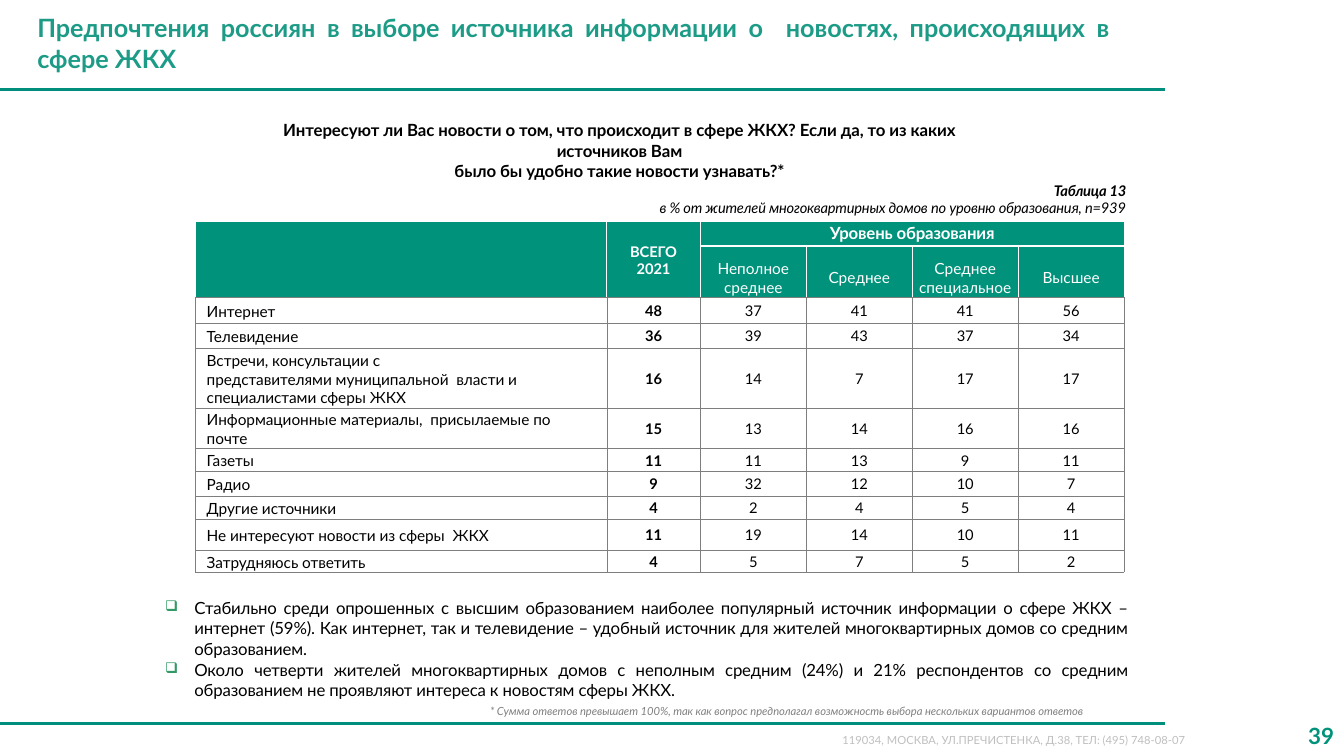
from lxml import etree
from pptx import Presentation
from pptx.dml.color import RGBColor
from pptx.enum.shapes import MSO_CONNECTOR
from pptx.enum.text import MSO_ANCHOR, PP_ALIGN
from pptx.oxml.ns import qn
from pptx.util import Cm, Pt

LEFT, CENTER, RIGHT, JUSTIFY = PP_ALIGN.LEFT, PP_ALIGN.CENTER, PP_ALIGN.RIGHT, PP_ALIGN.JUSTIFY
TOP, MIDDLE = MSO_ANCHOR.TOP, MSO_ANCHOR.MIDDLE
STRAIGHT = MSO_CONNECTOR.STRAIGHT

COLORS = {
    "rule": "008F7D", "header": "00927B", "title": "1C9B87", "bullet": "339966",
    "address": "BFBFBF", "note": "808080", "grid": "7E7E7E", "ink": "000000", "white": "FFFFFF",
}
DEFAULT_INSETS = (0.25, 0.13, 0.25, 0.13)
TIGHT = (0, 0.03, 0, 0)

COLUMN_WIDTHS = [10.36, 2.36] + [2.67] * 4
ROW_HEIGHTS = [0.61, 1.3, 0.64, 0.64, 1.5, 1.02, 0.58, 0.61, 0.58, 0.79, 0.56]
EDUCATION_LEVELS = ["Неполное среднее", "Среднее", "Среднее специальное", "Высшее"]
ANSWERS = [
    (["Интернет"], 48, 37, 41, 41, 56),
    (["Телевидение"], 36, 39, 43, 37, 34),
    (["Встречи, консультации с",
      "представителями муниципальной  власти и специалистами сферы ЖКХ"], 16, 14, 7, 17, 17),
    (["Информационные материалы,  присылаемые по почте"], 15, 13, 14, 16, 16),
    (["Газеты"], 11, 11, 13, 9, 11),
    (["Радио"], 9, 32, 12, 10, 7),
    (["Другие источники"], 4, 2, 4, 5, 4),
    (["Не интересуют новости из сферы  ЖКХ"], 11, 19, 14, 10, 11),
    (["Затрудняюсь ответить"], 4, 5, 7, 5, 2),
]
FINDINGS = [
    "Стабильно среди опрошенных с высшим образованием наиболее популярный источник информации "
    "о сфере ЖКХ – интернет (59%). Как интернет, так и телевидение – удобный источник для жителей "
    "многоквартирных домов со средним образованием.",
    "Около четверти жителей многоквартирных домов с неполным средним (24%) и 21% респондентов "
    "со средним образованием не проявляют интереса к новостям сферы ЖКХ.",
]


class SurveyPage:
    """Draws the elements of a survey page in one shared style."""

    def __init__(self, deck, font="Lato"):
        self.page = deck.slides.add_slide(deck.slide_layouts[6])
        self.font = font

    def rule(self, top, width=29.36):
        line = self.page.shapes.add_connector(STRAIGHT, 0, Cm(top), Cm(width), Cm(top))
        line.line.color.rgb = RGBColor.from_string(COLORS["rule"])
        line.line.width = Pt(2)
        etree.SubElement(line._element.spPr, qn("a:effectLst"))

    def box(self, left, top, width, height, insets=DEFAULT_INSETS, anchor=TOP):
        frame = self.page.shapes.add_textbox(Cm(left), Cm(top), Cm(width), Cm(height)).text_frame
        frame.word_wrap = True
        self.inset(frame, insets)
        frame.vertical_anchor = anchor
        return frame

    def inset(self, holder, insets):
        (holder.margin_left, holder.margin_top,
         holder.margin_right, holder.margin_bottom) = map(Cm, insets)

    def paragraph(self, frame, text, size, color="ink", align=LEFT, bold=False, italic=False,
                  before=0, indents=(0, 0, 0), tracking=0, bullet=None):
        first = frame.paragraphs[0]
        is_first = not first.runs
        para = first if is_first else frame.add_paragraph()
        para.alignment = align
        if before and not is_first:
            para.space_before = Pt(before)
        properties = para._p.get_or_add_pPr()
        for name, value in zip(("marL", "marR", "indent"), indents):
            properties.set(name, str(Cm(value)))
        if bullet:
            self.bullet(properties, bullet)
        para.font.name = self.font
        para.font.size = Pt(size)
        para.font.bold = bold
        para.font.italic = italic
        para.font.color.rgb = RGBColor.from_string(COLORS[color])
        span = para.add_run()
        span.text = text
        if tracking:
            span._r.get_or_add_rPr().set("spc", str(tracking))

    def bullet(self, properties, sign):
        color = etree.SubElement(properties, qn("a:buClr"))
        etree.SubElement(color, qn("a:srgbClr"), val=COLORS["bullet"])
        etree.SubElement(properties, qn("a:buSzPct"), val="88000")
        etree.SubElement(properties, qn("a:buChar"), char=sign)

    def grid(self, left, top, widths, heights):
        table = self.page.shapes.add_table(len(heights), len(widths), Cm(left), Cm(top),
                                           Cm(sum(widths)), Cm(sum(heights))).table
        table.first_row = table.horz_banding = False
        for column, width in zip(table.columns, widths):
            column.width = Cm(width)
        for row, height in zip(table.rows, heights):
            row.height = Cm(height)
        return table

    def cell(self, cell, header, closes_header=False, insets=TIGHT, anchor=MIDDLE):
        self.inset(cell, insets)
        cell.vertical_anchor = anchor
        for side in ("lnL", "lnR", "lnT", "lnB"):
            white = header and not (closes_header and side == "lnB")
            line = etree.SubElement(cell._tc.get_or_add_tcPr(), qn("a:" + side),
                                    w=str(Pt(1 if white else 0.25)))
            fill = etree.SubElement(line, qn("a:solidFill"))
            etree.SubElement(fill, qn("a:srgbClr"), val=COLORS["white" if white else "grid"])
        if header:
            cell.fill.solid()
            cell.fill.fore_color.rgb = RGBColor.from_string(COLORS["header"])
        else:
            cell.fill.background()
        return cell.text_frame

    def answer_table(self, left, top):
        table = self.grid(left, top, COLUMN_WIDTHS, ROW_HEIGHTS)
        for column in (0, 1):
            table.cell(0, column).merge(table.cell(1, column))
        table.cell(0, 2).merge(table.cell(0, 5))

        heads = [self.cell(table.cell(0, column), True, column < 2,
                           anchor=MIDDLE if column < 2 else TOP) for column in range(6)]
        for text in ("ВСЕГО", "2021"):
            self.paragraph(heads[1], text, 10.5, "white", CENTER, bold=True)
        self.paragraph(heads[2], "Уровень образования", 12, "white", CENTER, bold=True,
                       tracking=-10)
        for column in (0, 1):
            self.cell(table.cell(1, column), True, True)
        for column, level in enumerate(EDUCATION_LEVELS, 2):
            frame = self.cell(table.cell(1, column), True, True, insets=(0, 0.3, 0, 0))
            self.paragraph(frame, level, 11, "white", CENTER)

        for row, (labels, *shares) in enumerate(ANSWERS, 2):
            frame = self.cell(table.cell(row, 0), False, insets=(0, 0.05, 0, 0))
            for label in labels:
                self.paragraph(frame, label, 11, indents=(0.28, 0.76, 0), tracking=-5)
            for column, share in enumerate(shares, 1):
                frame = self.cell(table.cell(row, column), False, insets=(0.03, 0.03, 0.03, 0))
                self.paragraph(frame, str(share), 10.5, align=CENTER, bold=column == 1)


def main():
    deck = Presentation()
    deck.slide_width, deck.slide_height = Cm(33.87), Cm(19.05)
    survey = SurveyPage(deck)

    survey.rule(18.24)
    survey.paragraph(survey.box(20.98, 18.36, 9.75, 0.61),
                     "119034, МОСКВА, УЛ.ПРЕЧИСТЕНКА, Д.38, ТЕЛ: (495) 748-08-07", 8, "address")
    survey.rule(2.26)
    survey.paragraph(survey.box(32.13, 18.03, 1.74, 1.02, anchor=MIDDLE),
                     "39", 16, "header", RIGHT, bold=True)
    survey.paragraph(survey.box(0.69, 0, 27.53, 2.16, anchor=MIDDLE),
                     "Предпочтения россиян в выборе источника информации о  новостях, "
                     "происходящих в сфере ЖКХ", 18, "title", JUSTIFY, bold=True)
    survey.paragraph(survey.box(12.32, 17.75, 16.33, 0.36, (0, 0, 0, 0)),
                     "* Сумма ответов превышает 100%, так как вопрос предполагал возможность "
                     "выбора нескольких вариантов ответов", 8, "note", italic=True,
                     indents=(0.03, 0, 0), tracking=-5)

    question = survey.box(6.32, 3, 22.07, 2.01, TIGHT)
    for text in ("Интересуют ли Вас новости о том, что происходит в сфере ЖКХ? "
                 "Если да, то из каких источников Вам",
                 "было бы удобно такие новости узнавать?*"):
        survey.paragraph(question, text, 12, align=CENTER, bold=True,
                         indents=(0, 3.48, 0), tracking=-5)
    survey.paragraph(question, "Таблица 13", 10.5, align=RIGHT, bold=True, italic=True,
                     before=0.6, tracking=-10)
    survey.paragraph(question,
                     "в % от жителей многоквартирных домов по уровню образования, n=939",
                     10.5, align=RIGHT, italic=True, tracking=-10)

    survey.answer_table(4.93, 5.59)

    findings = survey.box(4.14, 15.04, 24.31, 2.13, TIGHT)
    for finding in FINDINGS:
        survey.paragraph(findings, finding, 12, align=JUSTIFY, before=1,
                         indents=(0.76, 0, -0.74), tracking=-10, bullet="❑")

    deck.save("out.pptx")


if __name__ == "__main__":
    main()
